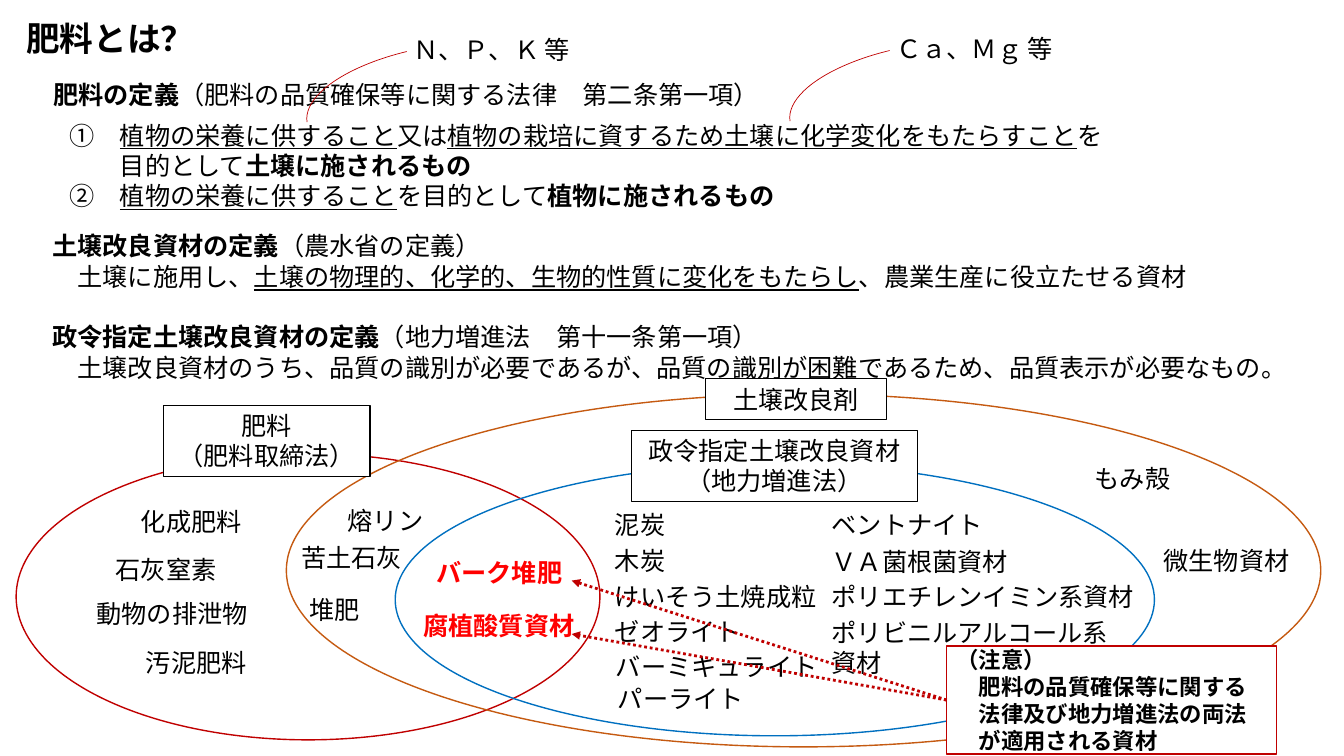
"""Build a slide defining fertilizers and soil improvement materials with a Venn diagram."""
from dataclasses import dataclass

import pptx
import pptx.dml.color
import pptx.enum.dml
import pptx.enum.shapes
import pptx.enum.text
import pptx.oxml
import pptx.oxml.ns
import pptx.util
from pptx.util import Inches

FONT = "Noto Sans CJK JP"
BLACK, WHITE, RED = "000000", "FFFFFF", "FF0000"
CRIMSON, ORANGE, BLUE = "C00000", "C55A11", "0070C0"
LINE_HEIGHT = 0.4
SHAPES = pptx.enum.shapes.MSO_SHAPE
ALIGN = pptx.enum.text.PP_ALIGN
ANCHOR = pptx.enum.text.MSO_ANCHOR


@dataclass(frozen=True)
class Run:
    text: str
    bold: bool = False
    underline: bool = False


@dataclass(frozen=True)
class Paragraph:
    runs: tuple[Run, ...]
    indent: float = 0
    space_before: float = 0


@dataclass(frozen=True)
class Box:
    left: float
    top: float
    width: float
    height: float = LINE_HEIGHT


@dataclass(frozen=True)
class Label:
    text: str
    box: Box
    color: str = BLACK
    bold: bool = False


@dataclass(frozen=True)
class Region:
    box: Box
    color: str


@dataclass(frozen=True)
class Callout:
    text: str
    left: float
    top: float


def rgb(color: str) -> pptx.dml.color.RGBColor:
    return pptx.dml.color.RGBColor.from_string(color)


def place(box: Box) -> tuple[int, ...]:
    return tuple(Inches(value) for value in (box.left, box.top, box.width, box.height))


def para(*runs: Run, indent: float = 0, space_before: float = 0) -> Paragraph:
    return Paragraph(runs, indent, space_before)


def write(frame, content, size=18, color=BLACK, bold=False, align=ALIGN.LEFT, anchor=ANCHOR.TOP) -> None:
    if isinstance(content, str):
        content = [para(Run(line, bold)) for line in content.split("\n")]
    frame.word_wrap = True
    frame.auto_size = pptx.enum.text.MSO_AUTO_SIZE.NONE
    frame.vertical_anchor = anchor
    for index, source in enumerate(content):
        paragraph = frame.add_paragraph() if index else frame.paragraphs[0]
        paragraph.alignment = align
        if source.space_before:
            paragraph.space_before = pptx.util.Pt(source.space_before)
        if source.indent:
            paragraph._p.get_or_add_pPr().set("marL", str(Inches(source.indent)))
        for part in source.runs:
            run = paragraph.add_run()
            run.text = part.text
            run.font.name = FONT
            run.font.size = pptx.util.Pt(size)
            run.font.bold = part.bold
            run.font.underline = part.underline
            run.font.color.rgb = rgb(color)
            east_asian = pptx.oxml.parse_xml(
                f'<a:ea {pptx.oxml.ns.nsdecls("a")} typeface="{FONT}"/>')
            run._r.rPr.find(pptx.oxml.ns.qn("a:latin")).addnext(east_asian)


def add_text(slide, box: Box, content, **text_format) -> None:
    write(slide.shapes.add_textbox(*place(box)).text_frame, content, **text_format)


def add_outline(slide, kind, box: Box, color: str, weight: float, fill: str | None = None):
    shape = slide.shapes.add_shape(kind, *place(box))
    shape.shadow.inherit = False
    if fill:
        shape.fill.solid()
        shape.fill.fore_color.rgb = rgb(fill)
    else:
        shape.fill.background()
    shape.line.color.rgb = rgb(color)
    shape.line.width = pptx.util.Pt(weight)
    return shape


def add_callout(slide, callout: Callout) -> None:
    arc_box = Box(callout.left - 0.16, callout.top - 0.65, 1.11, 2.73)
    arc = add_outline(slide, SHAPES.ARC, arc_box, CRIMSON, 0.5)
    arc.rotation = 261.3
    arc.adjustments[0], arc.adjustments[1] = 162, 199.54
    add_text(slide, Box(callout.left, callout.top, 2.65), callout.text)


def add_dotted_arrow(slide, note, tip_x: float, tip_y: float) -> None:
    arrow = slide.shapes.add_connector(
        pptx.enum.shapes.MSO_CONNECTOR.STRAIGHT, 0, 0, Inches(tip_x), Inches(tip_y))
    arrow.begin_connect(note, 1)
    arrow.line.color.rgb = rgb(CRIMSON)
    arrow.line.width = pptx.util.Pt(2)
    arrow.line.dash_style = pptx.enum.dml.MSO_LINE.ROUND_DOT
    namespace = pptx.oxml.ns.nsdecls("a")
    arrow.line._get_or_add_ln().append(pptx.oxml.parse_xml(f'<a:tailEnd {namespace} type="triangle"/>'))
    arrow._element.spPr.append(pptx.oxml.parse_xml(f"<a:effectLst {namespace}/>"))


NUTRITION = Run("植物の栄養に供すること", underline=True)
DEFINITIONS = [
    (Box(0.43, 0.74, 12.32), [
        para(Run("肥料の定義", bold=True), Run("（肥料の品質確保等に関する法律　第二条第一項）")),
    ]),
    (Box(0.59, 1.14, 10.46, 1.01), [
        para(Run("①　"), NUTRITION, Run("又は"),
             Run("植物の栽培に資するため土壌に化学変化をもたらすこと", underline=True), Run("を")),
        para(Run("目的として"), Run("土壌に施されるもの", bold=True), indent=0.5),
        para(Run("②　"), NUTRITION, Run("を目的として"), Run("植物に施されるもの", bold=True)),
    ]),
    (Box(0.42, 2.24, 12.53, 1.62), [
        para(Run("土壌改良資材の定義", bold=True), Run("（農水省の定義）")),
        para(Run("　土壌に施用し、"),
             Run("土壌の物理的、化学的、生物的性質に変化をもたらし", underline=True),
             Run("、農業生産に役立たせる資材")),
        para(Run("政令指定土壌改良資材の定義", bold=True),
             Run("（地力増進法　第十一条第一項）"), space_before=21.7),
        para(Run("　土壌改良資材のうち、品質の識別が必要であるが、品質の識別が困難であるため、品質表示が必要なもの。")),
    ]),
]
CALLOUTS = [Callout("Ｎ、Ｐ、Ｋ 等", 4, 0.29), Callout("Ｃａ、Ｍｇ 等", 8.79, 0.28)]
REGIONS = [
    Region(Box(0.16, 4.5, 5.79, 2.84), CRIMSON),
    Region(Box(2.84, 3.91, 10.26, 3.5), ORANGE),
    Region(Box(3.92, 4.6, 7.53, 2.7), BLUE),
]
REGION_NAMES = [
    Label("肥料\n（肥料取締法）", Box(1.62, 4.02, 2.05, 0.71)),
    Label("土壌改良剤", Box(7, 3.76, 1.79)),
    Label("政令指定土壌改良資材\n（地力増進法）", Box(6.26, 4.27, 2.84, 0.71)),
]
MATERIALS = [
    Label("化成肥料", Box(1.3, 4.97, 1.3)),
    Label("石灰窒素", Box(1.05, 5.45, 1.3)),
    Label("堆肥", Box(2.97, 5.85, 0.8)),
    Label("汚泥肥料", Box(1.35, 6.37, 1.3)),
    Label("動物の排泄物", Box(0.86, 5.89, 1.77)),
    Label("苦土石灰", Box(2.89, 5.33, 1.33)),
    Label("熔リン", Box(3.35, 4.96, 1.09)),
    Label("バーク堆肥", Box(4.23, 5.48, 1.56), RED, True),
    Label("腐植酸質資材", Box(4.1, 6.01, 1.97), RED, True),
    Label("微生物資材", Box(11.44, 5.36, 1.59)),
    Label("泥炭", Box(6, 5, 1.02)),
    Label("木炭", Box(6, 5.36, 1.02)),
    Label("けいそう土焼成粒", Box(6, 5.72, 2.43)),
    Label("ゼオライト", Box(6, 6.07, 2.41)),
    Label("バーミキュライト", Box(6.01, 6.41, 2.39)),
    Label("パーライト", Box(6.03, 6.73, 2.39)),
    Label("ベントナイト", Box(8.15, 5, 1.88)),
    Label("ＶＡ菌根菌資材", Box(8.15, 5.37, 2.39)),
    Label("もみ殻", Box(10.76, 4.55, 1.54)),
    Label("ポリエチレンイミン系資材", Box(8.15, 5.72, 3.29)),
    Label("ポリビニルアルコール系資材", Box(8.15, 6.07, 3.03, 0.71)),
]
NOTE = "（注意）\n　肥料の品質確保等に関する\n　法律及び地力増進法の両法\n　が適用される資材"


def main() -> None:
    deck = pptx.Presentation()
    deck.slide_width, deck.slide_height = Inches(13.33), Inches(7.5)
    slide = deck.slides.add_slide(deck.slide_layouts.get_by_name("Title Only"))
    title = slide.shapes.title
    title.left, title.top, title.width, title.height = place(Box(0.16, 0.13, 5.72, 0.5))
    write(title.text_frame, "肥料とは？", size=24, bold=True)
    for box, paragraphs in DEFINITIONS:
        add_text(slide, box, paragraphs)
    for callout in CALLOUTS:
        add_callout(slide, callout)
    for region in REGIONS:
        add_outline(slide, SHAPES.OVAL, region.box, region.color, 1)
    for name in REGION_NAMES:
        plate = add_outline(slide, SHAPES.RECTANGLE, name.box, BLACK, 0.75, WHITE)
        write(plate.text_frame, name.text, align=ALIGN.CENTER)
    for material in MATERIALS:
        add_text(slide, material.box, material.text, color=material.color, bold=material.bold)
    note = add_outline(slide, SHAPES.RECTANGLE, Box(9.39, 6.41, 3.27, 1.07), CRIMSON, 1, WHITE)
    write(note.text_frame, NOTE, size=16, bold=True, anchor=ANCHOR.MIDDLE)
    for tip_y in (5.76, 6.29):
        add_dotted_arrow(slide, note, 5.67, tip_y)
    deck.save("out.pptx")


if __name__ == "__main__":
    main()
